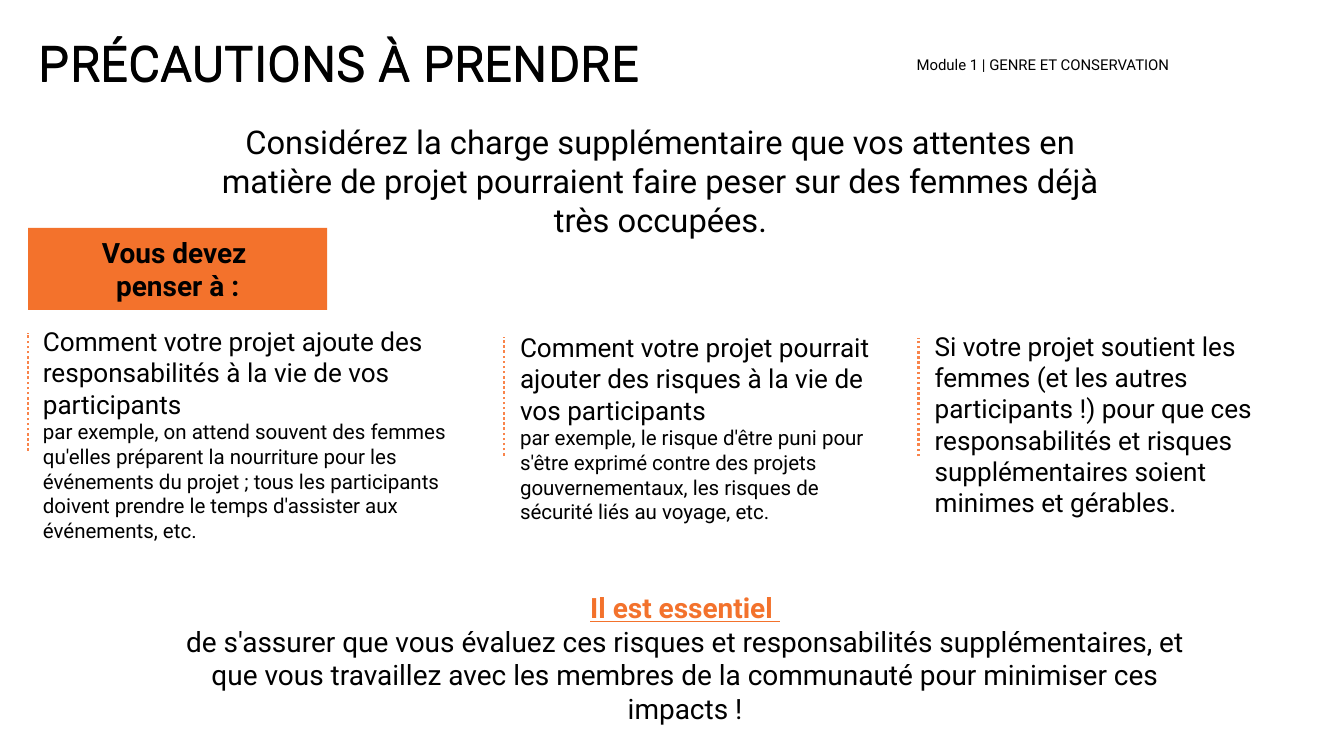
from lxml import etree
from pptx import Presentation
from pptx.dml.color import RGBColor
from pptx.enum.dml import MSO_LINE_DASH_STYLE as Dash
from pptx.enum.shapes import MSO_CONNECTOR as Connector, MSO_SHAPE as Shape
from pptx.enum.text import MSO_ANCHOR as Anchor, MSO_AUTO_SIZE as AutoSize, PP_ALIGN as Align
from pptx.oxml.ns import qn
from pptx.util import Inches, Pt

BLACK, ORANGE, LIGHT_ORANGE = "000000", "F3722C", "F9844A"


def color(value):
    return RGBColor.from_string(value)


def add_text(para, text, size=30, fill=BLACK, bold=False, underline=False, font="Roboto"):
    span = para.add_run()
    span.text = text
    span.font.name = font
    span.font.size = Pt(size)
    span.font.bold = bold
    span.font.underline = underline
    span.font.color.rgb = color(fill)


class SlideBuilder:
    def __init__(self, page):
        self.page = page

    def fill_box(self, box, lines, align=Align.LEFT, anchor=Anchor.TOP,
                 insets=(0.1, 0.05), spacing=None, grow=False):
        """Fill a box with one paragraph per (text, format) pair."""
        frame = box.text_frame
        frame.word_wrap = True
        frame.auto_size = AutoSize.SHAPE_TO_FIT_TEXT if grow else AutoSize.NONE
        frame.vertical_anchor = anchor
        frame.margin_left = frame.margin_right = Inches(insets[0])
        frame.margin_top = frame.margin_bottom = Inches(insets[1])
        for index, (text, style) in enumerate(lines):
            para = frame.add_paragraph() if index else frame.paragraphs[0]
            para.alignment = align
            if spacing:
                para.line_spacing = Pt(spacing)
            add_text(para, text, **style)

    def text(self, left, top, width, height, lines, **layout):
        box = self.page.shapes.add_textbox(*map(Inches, (left, top, width, height)))
        self.fill_box(box, lines, **layout)

    def banner(self, left, top, width, height, lines):
        box = self.page.shapes.add_shape(
            Shape.RECTANGLE, *map(Inches, (left, top, width, height)))
        box.shadow.inherit = False
        box.fill.solid()
        box.fill.fore_color.rgb = color(ORANGE)
        box.line.fill.background()
        self.fill_box(box, lines, align=Align.CENTER, anchor=Anchor.MIDDLE)

    def dotted_line(self, x, top, length=1.76):
        rule = self.page.shapes.add_connector(
            Connector.STRAIGHT, *map(Inches, (x, top + length, x, top)))
        rule.line.color.rgb = color(LIGHT_ORANGE)
        rule.line.width = Pt(2.75)
        rule.line.dash_style = Dash.ROUND_DOT
        etree.SubElement(rule.element.spPr, qn("a:effectLst"))


def main():
    deck = Presentation()
    deck.slide_width, deck.slide_height = Inches(20), Inches(11.25)
    slide = SlideBuilder(deck.slides.add_slide(deck.slide_layouts[6]))

    # Banner and introduction
    slide.banner(0.42, 3.39, 4.45, 1.22, [
        ("Vous devez ", dict(bold=True)), ("penser à :", dict(bold=True))])
    slide.text(3.17, 1.76, 13.32, 1.87, [
        ("Considérez la charge supplémentaire que vos attentes en matière de projet "
         "pourraient faire peser sur des femmes déjà très occupées.", dict(size=35))],
        align=Align.CENTER, grow=True)

    # Conclusion
    slide.text(2.42, 8.73, 15.55, 2.12, [
        ("Il est essentiel ", dict(fill=ORANGE, bold=True, underline=True)),
        ("de s'assurer que vous évaluez ces risques et responsabilités supplémentaires, "
         "et que vous travaillez avec les membres de la communauté pour minimiser ces "
         "impacts !", {})],
        align=Align.CENTER, anchor=Anchor.MIDDLE, insets=(0.3, 0.1))

    # Three points: text box, rule position, then question and example
    points = [
        ((0.54, 4.79, 6.63, 3.37), (0.42, 4.95),
         ["Comment votre projet ajoute des responsabilités à la vie de vos participants",
          "par exemple, on attend souvent des femmes qu'elles préparent la nourriture pour "
          "les événements du projet ; tous les participants doivent prendre le temps "
          "d'assister aux événements, etc."]),
        ((7.64, 4.88, 5.53, 3.37), (7.5, 5.02),
         ["Comment votre projet pourrait ajouter des risques à la vie de vos participants",
          "par exemple, le risque d'être puni pour s'être exprimé contre des projets "
          "gouvernementaux, les risques de sécurité liés au voyage, etc."]),
        ((13.81, 4.86, 5.78, 2.93), (13.67, 5.03),
         ["Si votre projet soutient les femmes (et les autres participants !) pour que ces "
          "responsabilités et risques supplémentaires soient minimes et gérables."]),
    ]
    for area, rule, texts in points:
        lines = [(text, dict(size=size)) for text, size in zip(texts, (28, 22))]
        slide.text(*area, lines, grow=True)
        slide.dotted_line(*rule)

    # Header: module label and title, doubled for a heavier stroke
    header = dict(insets=(0, 0), grow=True)
    slide.text(13.64, 0.79, 6.05, 0.3,
               [("Module 1 | GENRE ET CONSERVATION", dict(size=16))], spacing=22.4, **header)
    for top in (0.48, 0.49):
        slide.text(0.58, top, 10, 0.89,
                   [("PRÉCAUTIONS À PRENDRE", dict(size=53))], spacing=63.6, **header)

    deck.save("out.pptx")


if __name__ == "__main__":
    main()
